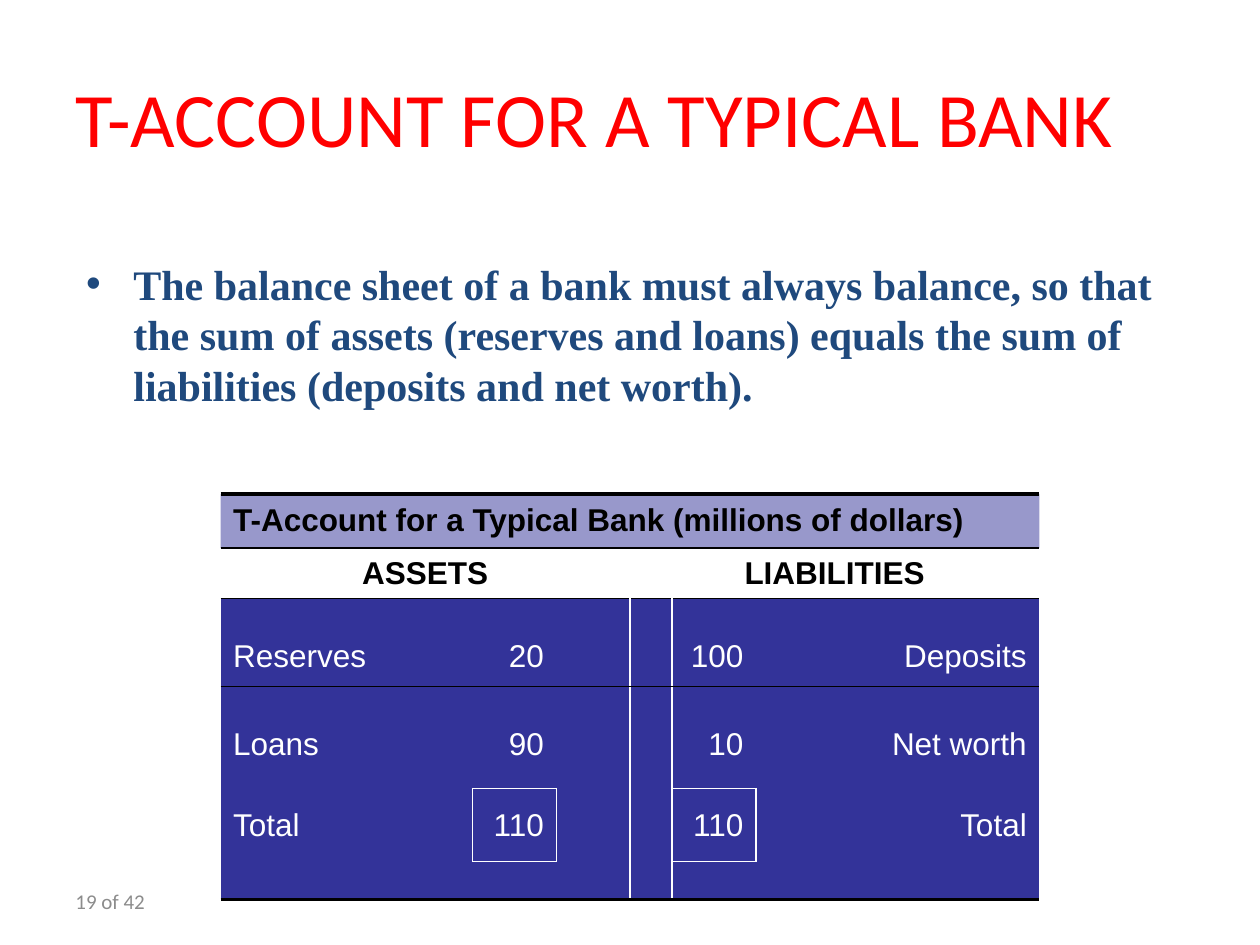
import lxml.etree
import pptx
import pptx.dml.color
import pptx.enum.text
import pptx.oxml.ns
import pptx.util

Pt = pptx.util.Pt
RGBColor = pptx.dml.color.RGBColor
PP_ALIGN = pptx.enum.text.PP_ALIGN
MSO_ANCHOR = pptx.enum.text.MSO_ANCHOR
qn = pptx.oxml.ns.qn

BLACK = RGBColor(0x00, 0x00, 0x00)
WHITE = RGBColor(0xFF, 0xFF, 0xFF)
RED = RGBColor(0xFF, 0x00, 0x00)
NAVY = RGBColor(0x1F, 0x49, 0x7D)
INDIGO = RGBColor(0x33, 0x33, 0x99)
GRAY = RGBColor(0x8C, 0x8C, 0x8C)
LEFT, CENTER, RIGHT = PP_ALIGN.LEFT, PP_ALIGN.CENTER, PP_ALIGN.RIGHT
NO_STYLE = "{2D5ABB26-0587-4C30-8999-92F81FD0307C}"


def add_run(p, text, font, size, color, bold=False):
    r = p.add_run()
    r.text = text
    r.font.name = font
    r.font.size = Pt(size)
    r.font.bold = bold
    r.font.color.rgb = color


def set_borders(cell, borders):
    tcPr = cell._tc.get_or_add_tcPr()
    sides = [side for side in "LRTB" if side in borders]
    for i, side in enumerate(sides):
        color, width = borders[side]
        ln = lxml.etree.Element(qn("a:ln" + side), w=str(Pt(width)))
        fill = lxml.etree.SubElement(ln, qn("a:solidFill"))
        lxml.etree.SubElement(fill, qn("a:srgbClr"), val=str(color))
        tcPr.insert(i, ln)


prs = pptx.Presentation()
prs.slide_width, prs.slide_height = Pt(720), Pt(540)
s = prs.slides.add_slide(prs.slide_layouts[1])

sp = s.shapes.title
sp.left, sp.top, sp.width, sp.height = Pt(36), Pt(21.6), Pt(648), Pt(90)
sp.text_frame.vertical_anchor = MSO_ANCHOR.MIDDLE
p = sp.text_frame.paragraphs[0]
p.alignment = LEFT
add_run(p, "T-ACCOUNT FOR A TYPICAL BANK", "Calibri", 44, RED)

sp = s.placeholders[1]
sp.left, sp.top, sp.width, sp.height = Pt(42), Pt(144), Pt(648), Pt(378)
p = sp.text_frame.paragraphs[0]
pPr = p._p.get_or_add_pPr()
pPr.set("marL", str(Pt(27)))
pPr.set("indent", str(Pt(-27)))
add_run(p, "The balance sheet of a bank must always balance, so that the sum of assets "
        "(reserves and loans) equals the sum of liabilities (deposits and net worth).",
        "Times New Roman", 24, NAVY, True)

sp = s.shapes.add_textbox(Pt(36), Pt(500.4), Pt(168), Pt(28.8))
tf = sp.text_frame
tf.word_wrap = True
tf.vertical_anchor = MSO_ANCHOR.MIDDLE
add_run(tf.paragraphs[0], "19 of 42", "Calibri", 12, GRAY)

col_widths = [144, 48, 42, 24, 48, 42, 120]
row_heights = [31, 28.8, 50.4, 58.2, 41.8, 21.6]
frame = s.shapes.add_table(len(row_heights), len(col_widths), Pt(126), Pt(282.2),
                           Pt(sum(col_widths)), Pt(sum(row_heights)))
table = frame.table
table.horz_banding = False
table._tbl.tblPr.find(qn("a:tableStyleId")).text = NO_STYLE
for col, width in zip(table.columns, col_widths):
    col.width = Pt(width)
for row, height in zip(table.rows, row_heights):
    row.height = Pt(height)

texts = {(0, 0): ("T-Account for a Typical Bank (millions of dollars)", LEFT),
         (1, 0): ("ASSETS", CENTER), (1, 3): ("LIABILITIES", CENTER)}
accounts = [("Reserves", "20", "100", "Deposits"),
            ("Loans", "90", "10", "Net worth"),
            ("Total", "110", "110", "Total")]
for row, account in enumerate(accounts, 2):
    for col, text in zip((0, 1, 4, 6), account):
        texts[row, col] = (text, LEFT if col == 0 else RIGHT)

thin_black, thick_black, thin_white = (BLACK, 1), (BLACK, 2.25), (WHITE, 1)
for row in range(len(row_heights)):
    for col in range(len(col_widths)):
        cell = table.cell(row, col)
        cell.fill.solid()
        cell.fill.fore_color.rgb = WHITE if row == 1 else INDIGO
        if row < 2:
            clr = cell._tc.tcPr.find(".//" + qn("a:srgbClr"))
            lxml.etree.SubElement(clr, qn("a:alpha"), val="50000")

        borders = {}
        if row == 0:
            borders.update(T=thick_black, B=thin_black)
        elif row == 1:
            borders.update(T=thin_black, B=thin_black)
        elif row == 2:
            borders.update(T=thin_black)
        elif row == 5:
            borders.update(B=thick_black)
        if row >= 2 and col in (2, 3):
            borders["R" if col == 2 else "L"] = thin_white
        if row == 4 and col in (1, 4):
            borders.update(L=thin_white, R=thin_white, T=thin_white)
            if col == 4:
                borders["B"] = thin_white
        set_borders(cell, borders)

        p = cell.text_frame.paragraphs[0]
        if (row, col) in texts:
            text, p.alignment = texts[row, col]
            add_run(p, text, "Arial", 18, BLACK if row < 2 else WHITE, row < 2)
            if row in (2, 3):
                cell.margin_top = Pt(23)
            else:
                cell.vertical_anchor = MSO_ANCHOR.MIDDLE
        else:
            lxml.etree.SubElement(p._p, qn("a:endParaRPr"), sz="800")

for row, first, last in [(0, 0, 6), (1, 0, 2), (1, 3, 6), (5, 0, 2)]:
    table.cell(row, first).merge(table.cell(row, last))
set_borders(table.cell(5, 0), {"R": thin_white})

prs.save("out.pptx")
